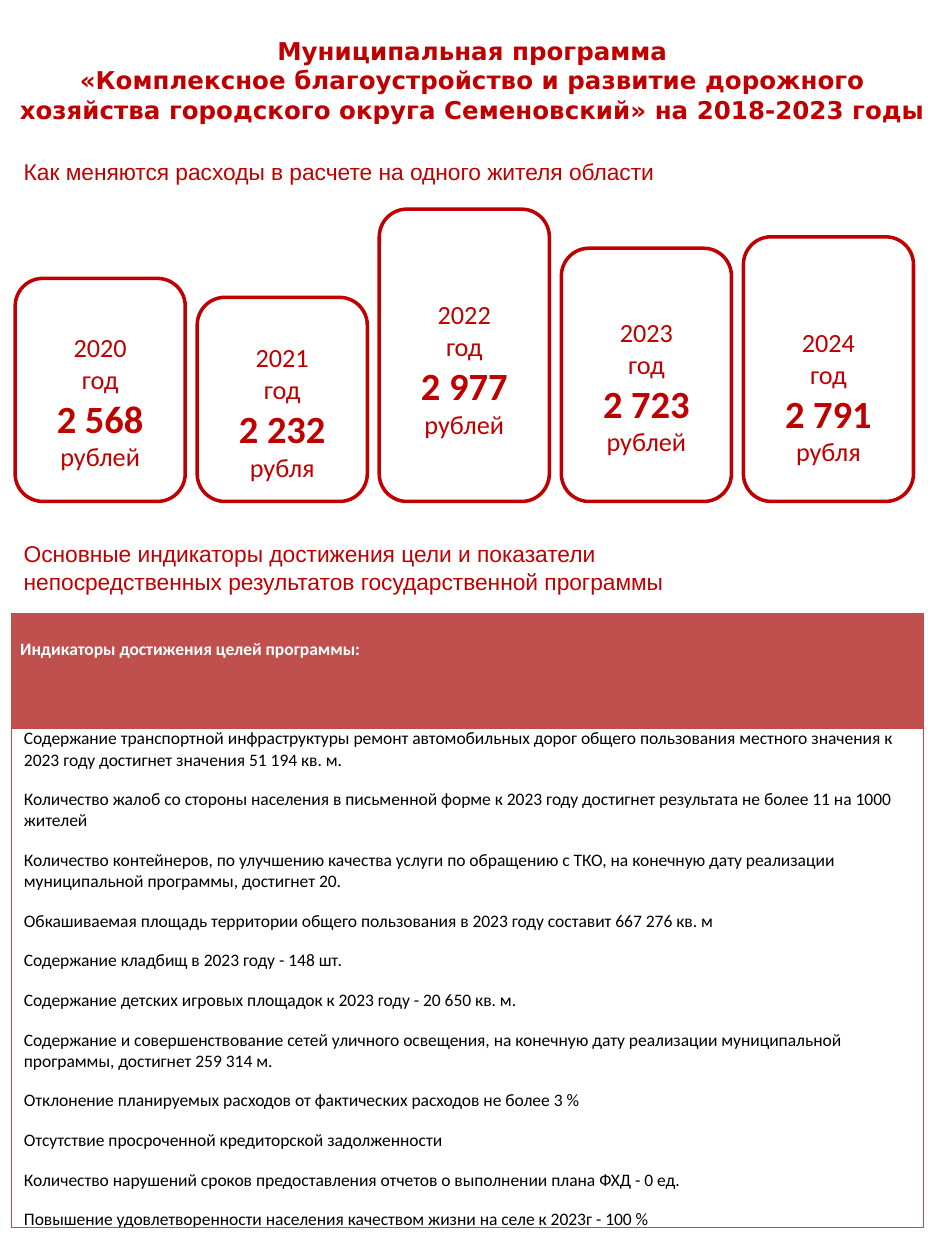
from dataclasses import dataclass

from lxml.etree import SubElement
from pptx import Presentation
from pptx.dml.color import RGBColor
from pptx.enum.shapes import MSO_SHAPE
from pptx.enum.text import MSO_ANCHOR, MSO_AUTO_SIZE, PP_ALIGN
from pptx.oxml.ns import qn
from pptx.util import Inches, Pt


@dataclass(frozen=True)
class Theme:
    red: str = "C00000"
    head: str = "C0504D"
    edge: str = "BF4C48"
    white: str = "FFFFFF"
    black: str = "000000"
    title: float = 14
    lead: float = 13
    label: float = 15
    sum: float = 22
    body: float = 10


@dataclass(frozen=True)
class Card:
    year: str
    cost: str
    unit: str
    top: float
    text: float  # where the first line of text starts


THEME = Theme()
LEFT, STEP, WIDE, BASE, ROUND = 0.12, 1.445, 1.35, 3.98, 0.22

CARDS = [
    Card("2020", "2 568", "рублей", 2.21, 2.63),
    Card("2021", "2 232", "рубля", 2.36, 2.71),
    Card("2022", "2 977", "рублей", 1.66, 2.37),
    Card("2023", "2 723", "рублей", 1.97, 2.51),
    Card("2024", "2 791", "рубля", 1.88, 2.59),
]

GOALS = [
    "Содержание транспортной инфраструктуры ремонт автомобильных дорог общего "
    "пользования местного значения к 2023 году достигнет значения 51 194 кв. м.",
    "Количество жалоб со стороны населения в письменной форме к 2023 году "
    "достигнет результата не более 11 на 1000 жителей",
    "Количество контейнеров, по улучшению качества услуги по обращению с ТКО, "
    "на конечную дату реализации муниципальной программы, достигнет 20.",
    "Обкашиваемая площадь территории общего пользования в 2023 году составит "
    "667 276 кв. м",
    "Содержание кладбищ в 2023 году - 148 шт.",
    "Содержание детских игровых площадок к 2023 году - 20 650 кв. м.",
    "Содержание и совершенствование сетей уличного освещения, на конечную дату "
    "реализации муниципальной программы, достигнет 259 314 м.",
    "Отклонение планируемых расходов от фактических расходов не более 3 %",
    "Отсутствие просроченной кредиторской задолженности",
    "Количество нарушений сроков предоставления отчетов о выполнении плана "
    "ФХД - 0 ед.",
    "Повышение удовлетворенности населения качеством жизни на селе к 2023г - 100 %",
]


def write(frame, text: str, *, size: float, font: str = "Calibri",
          color: str = THEME.red, bold: bool = False, align=PP_ALIGN.LEFT,
          line=None, before: float = 0) -> None:
    """Fill the empty first paragraph, or add a new one after it."""
    para = frame.paragraphs[-1]
    if para.runs:
        para = frame.add_paragraph()
    para.text = text
    para.alignment = align
    para.space_before = Pt(before)
    if line is not None:
        para.line_spacing = line
    for run in para.runs:
        run.font.name = font
        run.font.size = Pt(size)
        run.font.bold = bold
        run.font.color.rgb = RGBColor.from_string(color)


def place(shape, x: float, y: float, w: float, h: float) -> None:
    shape.left, shape.top = Inches(x), Inches(y)
    shape.width, shape.height = Inches(w), Inches(h)


def draw_title(slide) -> None:
    title = slide.shapes.title
    place(title, 0, 0.23, 7.5, 0.81)
    frame = title.text_frame
    frame.word_wrap = True
    frame.auto_size = MSO_AUTO_SIZE.NONE
    frame.vertical_anchor = MSO_ANCHOR.MIDDLE
    write(frame, "Муниципальная программа\v«Комплексное благоустройство и развитие "
          "дорожного хозяйства городского округа Семеновский» на 2018-2023 годы",
          size=THEME.title, font="DejaVu Sans", bold=True, align=PP_ALIGN.CENTER)


def draw_lead(slide, lines: list[str], mid: float) -> None:
    """Draw a section heading centred on the height mid."""
    high = 0.25 * len(lines)
    box = slide.shapes.add_textbox(
        Inches(0.09), Inches(mid - high / 2), Inches(7.2), Inches(high))
    frame = box.text_frame
    frame.word_wrap = True
    frame.margin_top = frame.margin_bottom = 0
    frame.vertical_anchor = MSO_ANCHOR.MIDDLE
    for text in lines:
        write(frame, text, size=THEME.lead, font="Arial", line=Pt(16))


def draw_card(slide, card: Card, x: float) -> None:
    box = slide.shapes.add_shape(
        MSO_SHAPE.ROUNDED_RECTANGLE, Inches(x), Inches(card.top),
        Inches(WIDE), Inches(BASE - card.top))
    box.adjustments[0] = ROUND / min(WIDE, BASE - card.top)
    box.shadow.inherit = False
    box.fill.background()
    box.line.color.rgb = RGBColor.from_string(THEME.red)
    box.line.width = Pt(2)
    frame = box.text_frame
    frame.word_wrap = True
    frame.vertical_anchor = MSO_ANCHOR.TOP
    frame.margin_left = frame.margin_right = frame.margin_bottom = 0
    # A rounded rectangle already insets its text by 0.29 of the radius.
    frame.margin_top = Inches(card.text - card.top - 0.29 * ROUND)
    for text in (card.year, "год", card.cost, card.unit):
        main = text == card.cost
        write(frame, text, size=THEME.sum if main else THEME.label, bold=main,
              align=PP_ALIGN.CENTER, line=Pt(26.5 if main else 18))


def edge_cell(cell) -> None:
    props = cell._tc.get_or_add_tcPr()
    for spot, side in enumerate(("lnL", "lnR", "lnT", "lnB")):
        line = props.makeelement(qn(f"a:{side}"), {"w": str(Pt(0.75))})
        fill = SubElement(line, qn("a:solidFill"))
        SubElement(fill, qn("a:srgbClr"), val=THEME.edge)
        props.insert(spot, line)


def draw_table(slide) -> None:
    rows = (0.91, 3.96)
    table = slide.shapes.add_table(
        2, 1, Inches(0.09), Inches(4.87), Inches(7.24), Inches(sum(rows))).table
    looks = ((THEME.head, 0.07, 0.2), (THEME.white, 0.1, 0))
    for row, high, (fill, left, top) in zip(table.rows, rows, looks):
        row.height = Inches(high)
        cell = row.cells[0]
        cell.fill.solid()
        cell.fill.fore_color.rgb = RGBColor.from_string(fill)
        cell.margin_left, cell.margin_top = Inches(left), Inches(top)
        cell.margin_right = cell.margin_bottom = 0
        edge_cell(cell)
    write(table.cell(0, 0).text_frame, "Индикаторы достижения целей программы:",
          size=THEME.body, color=THEME.white, bold=True)
    for rank, goal in enumerate(GOALS):
        write(table.cell(1, 0).text_frame, goal, size=THEME.body,
              color=THEME.black, before=10.5 if rank else 0)


def main() -> None:
    deck = Presentation()
    deck.slide_width, deck.slide_height = Inches(7.5), Inches(10)
    slide = deck.slides.add_slide(deck.slide_layouts[5])
    draw_title(slide)
    draw_lead(slide, ["Как меняются расходы в расчете на одного жителя области"], 1.36)
    for rank, card in enumerate(CARDS):
        draw_card(slide, card, LEFT + rank * STEP)
    draw_lead(slide, ["Основные индикаторы достижения цели и показатели",
                      "непосредственных результатов государственной программы"], 4.5)
    draw_table(slide)
    deck.save("out.pptx")


if __name__ == "__main__":
    main()
